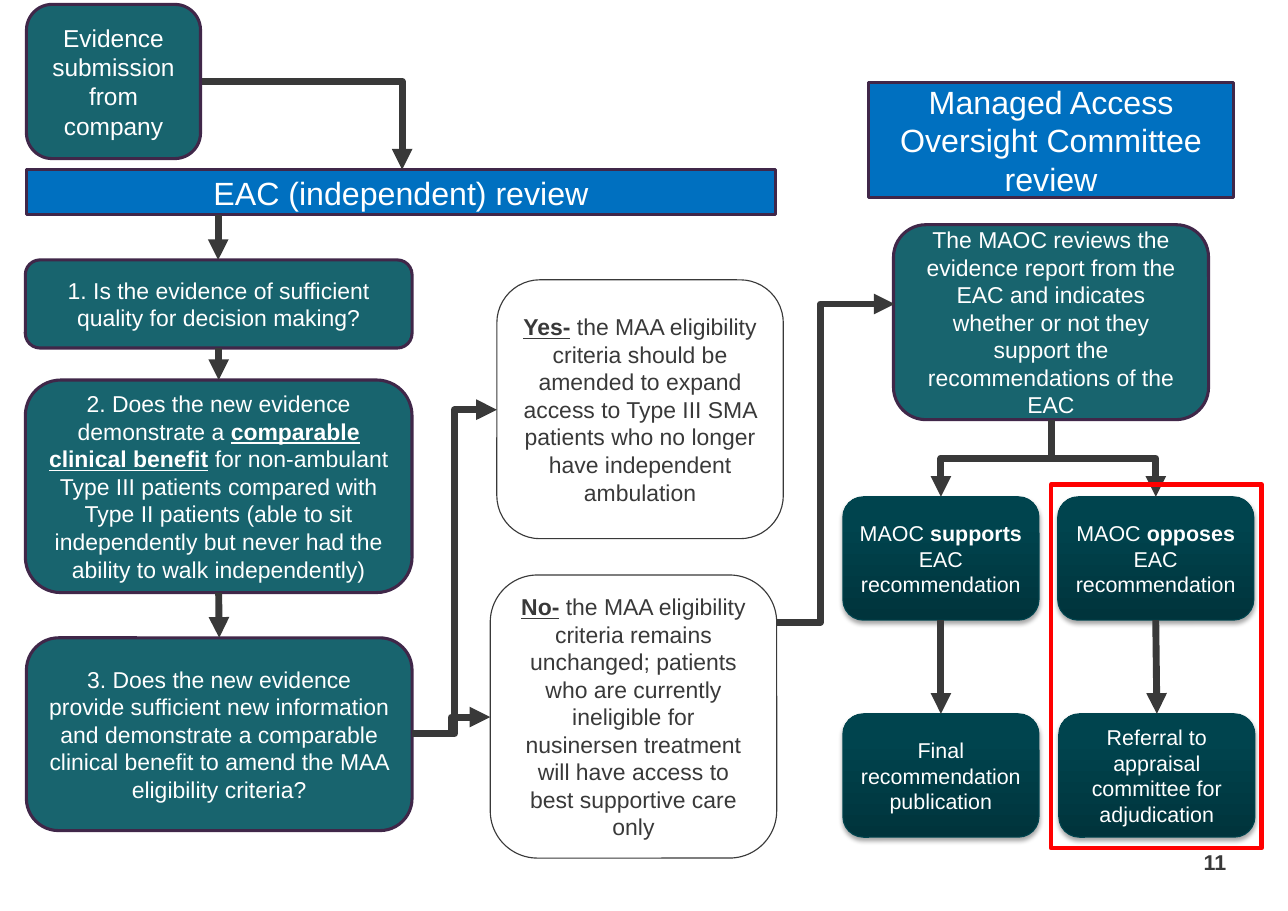
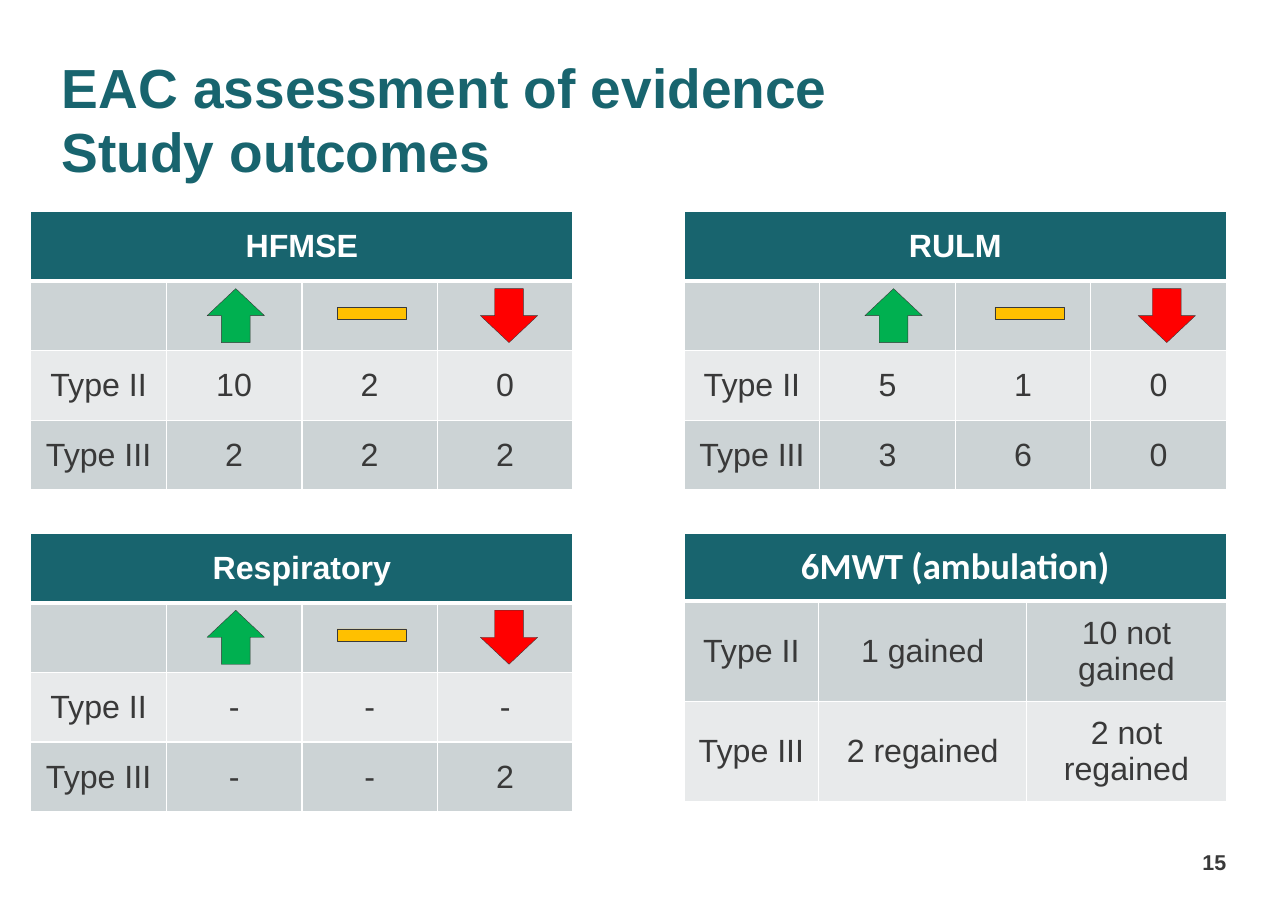
from lxml.etree import SubElement
from pptx import Presentation
from pptx.dml.color import RGBColor
from pptx.enum.shapes import MSO_CONNECTOR, MSO_SHAPE
from pptx.enum.text import MSO_ANCHOR, MSO_AUTO_SIZE, PP_ALIGN
from pptx.oxml.ns import qn
from pptx.util import Pt

# Shared look
PX = 9144  # 100 px to the inch
TEAL = RGBColor(0x18, 0x64, 0x6E)
DEEP_TEAL = RGBColor(0x00, 0x44, 0x4E)
DARKEST_TEAL = RGBColor(0x00, 0x34, 0x3C)
PLUM = RGBColor(0x40, 0x27, 0x49)
BLUE = RGBColor(0x00, 0x70, 0xC0)
INK = RGBColor(0x39, 0x39, 0x39)
WHITE = RGBColor(0xFF, 0xFF, 0xFF)
RED = RGBColor(0xFF, 0x00, 0x00)
GREEN = RGBColor(0x00, 0xB0, 0x50)
AMBER = RGBColor(0xFF, 0xC0, 0x00)
BANDS = (RGBColor(0xCC, 0xD3, 0xD5), RGBColor(0xE8, 0xEA, 0xEB))
FONT = "Arial"
BOLD, BOLD_UNDERLINED = "b", "bu"


def emu(*lengths):
    return [round(length * PX) for length in lengths]


def write(frame, *runs, size, color=WHITE, font=FONT, bold=False,
          align=PP_ALIGN.CENTER, anchor=MSO_ANCHOR.MIDDLE, margin=None, spacing=None):
    """Fill a frame with runs: plain text, (text, style) pairs or line breaks."""
    frame.word_wrap = True
    frame.auto_size = MSO_AUTO_SIZE.NONE
    frame.vertical_anchor = anchor
    if margin is not None:
        frame.margin_left = frame.margin_right = margin
        frame.margin_top = frame.margin_bottom = margin
    paragraph = frame.paragraphs[0]
    paragraph.alignment = align
    if spacing:
        paragraph.line_spacing = Pt(spacing)
    for item in runs:
        if item == "\n":
            paragraph.add_line_break()
            continue
        text, style = (item, "") if isinstance(item, str) else item
        run = paragraph.add_run()
        run.text = text
        run.font.name, run.font.size = font, Pt(size)
        run.font.bold = bold or "b" in style
        run.font.underline = "u" in style
        run.font.color.rgb = color


def add_box(shapes, preset, place, fill=None, line=PLUM, weight=2):
    box = shapes.add_shape(preset, *emu(*place))
    box.shadow.inherit = False
    if fill is None:
        box.fill.background()
    else:
        box.fill.solid()
        box.fill.fore_color.rgb = fill
    box.line.color.rgb = line
    box.line.width = Pt(weight)
    return box


def add_step(slide, place, *runs, size=15):
    step = add_box(slide.shapes, MSO_SHAPE.ROUNDED_RECTANGLE, place, TEAL)
    write(step.text_frame, *runs, size=size)
    return step


def add_banner(slide, place, text):
    banner = add_box(slide.shapes, MSO_SHAPE.RECTANGLE, place, BLUE)
    write(banner.text_frame, text, size=21)


def add_answer(slide, place, answer, text):
    outline = add_box(slide.shapes, MSO_SHAPE.ROUNDED_RECTANGLE, place, line=INK, weight=0.75)
    write(outline.text_frame, (answer, BOLD_UNDERLINED), text, size=15, color=INK)


def add_outcome(slide, left, top, *runs):
    """Gradient box with a soft shadow below."""
    outcome = add_box(slide.shapes, MSO_SHAPE.ROUNDED_RECTANGLE, (left, top, 178, 112),
                      line=DEEP_TEAL, weight=0.75)
    outcome.fill.gradient()
    outcome.fill.gradient_angle = 90
    stops = zip(outcome.fill.gradient_stops, (DARKEST_TEAL, DEEP_TEAL), (0, 0.8))
    for stop, color, position in stops:
        stop.color.rgb, stop.position = color, position
    effects = outcome._element.spPr.find(qn("a:effectLst"))
    shadow = SubElement(effects, qn("a:outerShdw"), blurRad="39370", dist="22860",
                        dir="5400000", rotWithShape="0")
    shade = SubElement(shadow, qn("a:srgbClr"), val="000000")
    SubElement(shade, qn("a:alpha"), val="35000")
    write(outcome.text_frame, *runs, size=14)
    return outcome


# Arrows
def add_arrow(slide, start, end, kind=MSO_CONNECTOR.STRAIGHT):
    arrow = slide.shapes.add_connector(kind, *emu(*start, *end))
    arrow.line.color.rgb = INK
    arrow.line.width = Pt(4.5)
    SubElement(arrow.line._get_or_add_ln(), qn("a:tailEnd"), type="triangle")
    SubElement(arrow._element.spPr, qn("a:effectLst"))
    return arrow


def join_down(slide, upper, lower):
    arrow = add_arrow(slide, (0, 0), (0, 0))
    arrow.begin_connect(upper, 2)
    arrow.end_connect(lower, 0)


def add_elbow(slide, start, end, turn=None):
    """Go across, up or down, across; turn is the share of the width before the bend."""
    elbow = add_arrow(slide, start, end, MSO_CONNECTOR.ELBOW)
    if turn is not None:
        guides = elbow._element.spPr.find(qn("a:prstGeom")).find(qn("a:avLst"))
        SubElement(guides, qn("a:gd"), name="adj1", fmla=f"val {round(turn * 100000)}")


def add_corner(slide, start, end):
    """Go across, then down."""
    corner = add_arrow(slide, start, end, MSO_CONNECTOR.ELBOW)
    corner._element.spPr.find(qn("a:prstGeom")).set("prst", "bentConnector2")


def add_branch(slide, start, end):
    """Go down, across, down: an elbow turned by a quarter about its centre."""
    (x1, y1), (x2, y2) = start, end
    mid_x, mid_y = (x1 + x2) / 2, (y1 + y2) / 2
    half_x, half_y = (y2 - y1) / 2, (x1 - x2) / 2
    branch = add_arrow(slide, (mid_x - half_x, mid_y - half_y),
                       (mid_x + half_x, mid_y + half_y), MSO_CONNECTOR.ELBOW)
    branch._element.spPr.find(qn("a:xfrm")).set("rot", "5400000")


def add_page_number(slide, number):
    corner = slide.shapes.add_textbox(*emu(1058, 758, 55, 36))
    write(corner.text_frame, number, size=14, color=INK, bold=True,
          align=PP_ALIGN.RIGHT, anchor=MSO_ANCHOR.BOTTOM, margin=0)


# Tables
def set_borders(cell, top, bottom):
    properties = cell._tc.get_or_add_tcPr()
    for side, weight in (("L", 1), ("R", 1), ("T", top), ("B", bottom)):
        edge = SubElement(properties, qn(f"a:ln{side}"), w=str(Pt(weight)))
        SubElement(SubElement(edge, qn("a:solidFill")), qn("a:srgbClr"), val=str(WHITE))


def add_results(slide, left, top, heading, rows, widths, heights, **heading_format):
    """Table with one heading across all columns and banded rows below."""
    frame = slide.shapes.add_table(len(heights), len(widths),
                                   *emu(left, top, sum(widths), sum(heights)))
    table = frame.table
    for column, width in zip(table.columns, emu(*widths)):
        column.width = width
    for row, height in zip(table.rows, emu(*heights)):
        row.height = height
    table.cell(0, 0).merge(table.cell(0, len(widths) - 1))
    for r, row in enumerate(table.rows):
        for cell in row.cells:
            set_borders(cell, top=3 if r == 1 else 1, bottom=3 if r == 0 else 1)
            cell.fill.solid()
            cell.fill.fore_color.rgb = BANDS[(r - 1) % 2] if r else TEAL
    write_cell(table.cell(0, 0), heading, **{"size": 21, "bold": True, **heading_format})
    for r, texts in enumerate(rows, 1):
        for c, text in enumerate(texts):
            if text:
                write_cell(table.cell(r, c), text, size=21, color=INK)


def write_cell(cell, text, **text_format):
    cell.vertical_anchor = MSO_ANCHOR.MIDDLE
    paragraph = cell.text_frame.paragraphs[0]
    paragraph.alignment = PP_ALIGN.CENTER
    run = paragraph.add_run()
    run.text = text
    run.font.name = text_format.get("font", FONT)
    run.font.size = Pt(text_format["size"])
    run.font.bold = text_format.get("bold", False)
    run.font.color.rgb = text_format.get("color", WHITE)


def add_trend_icons(slide, left, top):
    """Better, unchanged, worse."""
    icons = slide.shapes.add_group_shape().shapes
    add_box(icons, MSO_SHAPE.UP_ARROW, (left, top, 52, 49), GREEN, INK, 0.25)
    add_box(icons, MSO_SHAPE.RECTANGLE, (left + 118, top + 17, 63, 11), AMBER, INK, 0.25)
    worse = add_box(icons, MSO_SHAPE.UP_ARROW, (left + 248, top, 52, 49), RED, INK, 0.25)
    worse.rotation = 180


# Slides
def build_process(deck):
    slide = deck.slides.add_slide(deck.slide_layouts[6])
    add_page_number(slide, "11")

    # Evidence and the three review questions
    add_step(slide, (24, 4, 158, 140), "Evidence submission from company", size=16)
    quality = add_step(slide, (23, 236, 351, 80),
                       "1. Is the evidence of sufficient quality for decision making?")
    benefit = add_step(slide, (23, 345, 351, 193),
                       "2. Does the new evidence demonstrate a ",
                       ("comparable clinical benefit", BOLD_UNDERLINED),
                       " for non-ambulant Type III patients compared with Type II patients "
                       "(able to sit independently but never had the ability to walk "
                       "independently)")
    criteria = add_step(slide, (24, 579, 350, 175),
                        "3. Does the new evidence provide sufficient new information and "
                        "demonstrate a comparable clinical benefit to amend the MAA "
                        "eligibility criteria?")
    add_step(slide, (811, 204, 286, 177),
             "The MAOC reviews the evidence report from the EAC and indicates whether or "
             "not they support the recommendations of the EAC")
    add_banner(slide, (24, 154, 680, 41), "EAC (independent) review")
    add_banner(slide, (788, 75, 332, 104), "Managed Access Oversight Committee review")

    # EAC answers
    add_answer(slide, (451, 254, 260, 235), "Yes-",
               " the MAA eligibility criteria should be amended to expand access to "
               "Type III SMA patients who no longer have independent ambulation")
    add_answer(slide, (445, 522, 260, 257), "No-",
               " the MAA eligibility criteria remains unchanged; patients who are "
               "currently ineligible for nusinersen treatment will have access to best "
               "supportive care only")

    # Flow through the review
    add_corner(slide, (183, 74), (365, 154))
    add_arrow(slide, (198, 195), (198, 236))
    join_down(slide, quality, benefit)
    join_down(slide, benefit, criteria)
    add_elbow(slide, (374, 666), (451, 372))
    add_elbow(slide, (374, 666), (445, 651))
    add_elbow(slide, (705, 565), (812, 276), turn=0.37)

    # Committee decision and what follows
    supports = add_outcome(slide, 765, 451, "MAOC ", ("supports", BOLD), " EAC recommendation")
    opposes = add_outcome(slide, 960, 451, "MAOC ", ("opposes", BOLD), " EAC recommendation")
    publication = add_outcome(slide, 765, 648, "Final recommendation publication")
    referral = add_outcome(slide, 961, 648, "Referral to appraisal committee for adjudication")
    for x in (854, 1049):
        add_branch(slide, (954, 381), (x, 451))
    join_down(slide, supports, publication)
    join_down(slide, opposes, referral)
    add_box(slide.shapes, MSO_SHAPE.RECTANGLE, (954, 440, 191, 330), line=RED, weight=3)


def build_outcomes(deck):
    slide = deck.slides.add_slide(deck.slide_layouts[5])
    title = slide.shapes.title
    title.left, title.top, title.width, title.height = emu(56, 50, 1057, 84)
    write(title.text_frame, "EAC assessment of evidence", "\n", "Study outcomes", size=36,
          color=TEAL, bold=True, align=PP_ALIGN.LEFT, anchor=MSO_ANCHOR.TOP, margin=0,
          spacing=42)
    add_page_number(slide, "15")

    # Motor and respiratory scores: left, top, icons' left, heading, counts
    scores = (
        (28, 192, 188, "HFMSE", ("10", "2", "0"), ("2", "2", "2")),
        (621, 192, 785, "RULM", ("5", "1", "0"), ("3", "6", "0")),
        (28, 484, 188, "Respiratory", ("-", "-", "-"), ("-", "-", "2")),
    )
    for left, top, icons_left, heading, type_2, type_3 in scores:
        rows = ((), ("Type II", *type_2), ("Type III", *type_3))
        add_results(slide, left, top, heading, rows, [123] * 4, [63.25] * 4)
        add_trend_icons(slide, icons_left, top + 70)

    # Walking test
    add_results(slide, 621, 484, "6MWT (ambulation)",
                (("Type II", "1 gained", "10 not gained"),
                 ("Type III", "2 regained", "2 not regained")),
                (122, 189, 181), (62, 91, 91), size=24, font="Calibri")


def main():
    deck = Presentation()
    deck.slide_width, deck.slide_height = emu(1169, 827)
    build_process(deck)
    build_outcomes(deck)
    deck.save("out.pptx")


if __name__ == "__main__":
    main()
